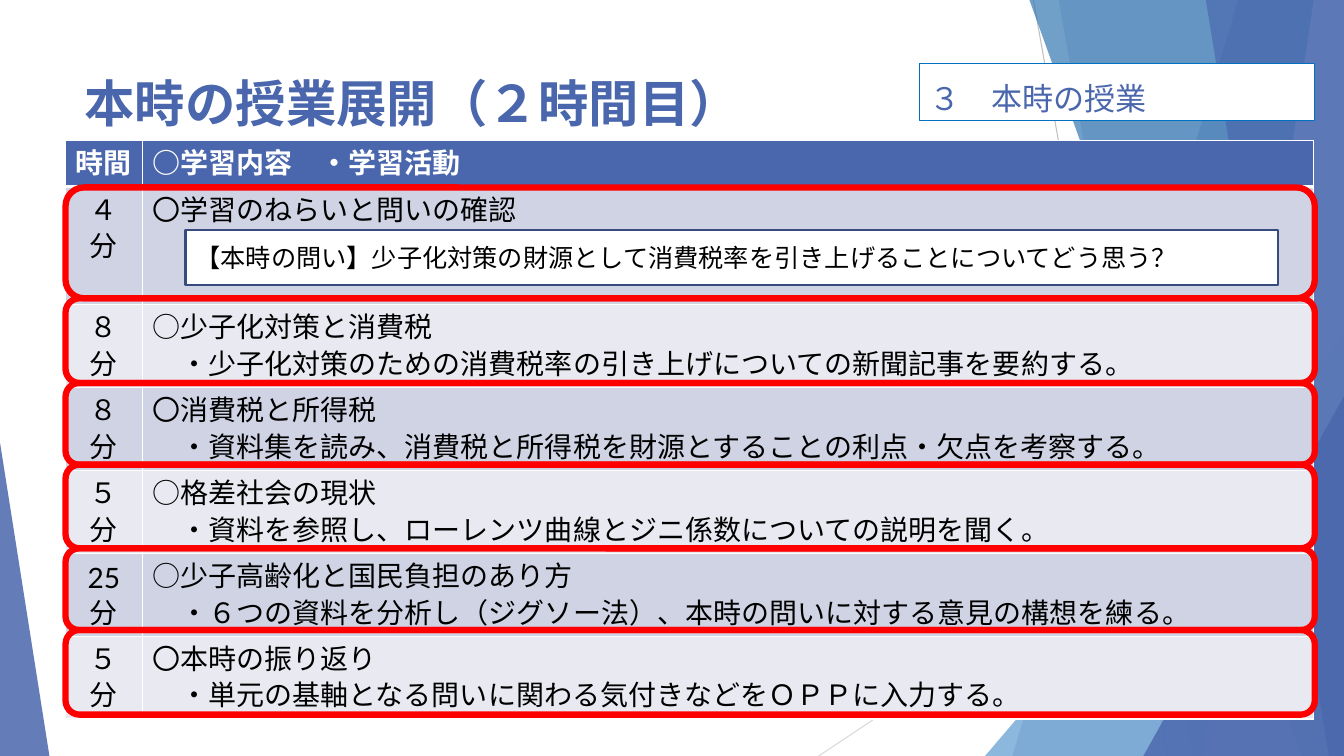
from dataclasses import dataclass, field
from typing import Any, Optional

from lxml.etree import SubElement
from pptx import Presentation
from pptx.dml.color import RGBColor
from pptx.enum.shapes import MSO_CONNECTOR, MSO_SHAPE
from pptx.enum.text import MSO_ANCHOR, PP_ALIGN
from pptx.oxml import parse_xml
from pptx.oxml.ns import nsdecls, qn
from pptx.util import Emu, Pt

EMU_PER_PX = 9144  # 100 px to the inch
SLIDE_WIDTH, SLIDE_HEIGHT = 1333, 750


@dataclass(frozen=True)
class Theme:
    heading_font: str = "Arial"
    body_font: str = "Lato"
    title_size: float = 36
    tag_size: float = 22.2
    table_size: float = 20
    question_size: float = 18
    accent: str = "4A66AC"
    sky: str = "629DD1"
    ocean: str = "3477B2"
    lavender: str = "90A2CF"
    white: str = "FFFFFF"
    black: str = "000000"
    gray: str = "BFBFBF"
    light_gray: str = "D9D9D9"
    bands: tuple[str, str] = ("D0D3E3", "E9EAF1")
    question_line: str = "374B7F"
    tag_line: str = "0070C0"
    frame_line: str = "FF0000"


THEME = Theme()


@dataclass(frozen=True)
class Box:
    left: int
    top: int
    width: int
    height: int

    def emu(self) -> tuple[Emu, ...]:
        return tuple(px(n) for n in (self.left, self.top, self.width, self.height))


@dataclass(frozen=True)
class Ray:
    start: tuple[int, int]
    end: tuple[int, int]
    color: str


@dataclass(frozen=True)
class Shard:
    """A translucent band running from the slide's top to its bottom, along the right edge."""
    top_left: int
    top_right: int
    bottom_left: int
    color: str
    opacity: int


@dataclass(frozen=True)
class Wedge:
    box: Box
    apex: float
    color: str
    opacity: int


@dataclass(frozen=True)
class Step:
    minutes: str
    content: list[str]
    height: int = 82


@dataclass(frozen=True)
class Label:
    text: str
    box: Box
    font: dict[str, Any]
    color: str
    line: Optional[tuple[str, float]] = None
    paragraph: dict[str, Any] = field(default_factory=dict)


RAYS = [
    Ray((1025, 0), (1158, 750), THEME.gray),
    Ray((1333, 403), (812, 750), THEME.light_gray),
]
BACKDROP = [
    Shard(1228, 1333, 1004, THEME.accent, 30),
    Shard(1050, 1333, 1183, THEME.accent, 20),
    Wedge(Box(977, 333, 356, 417), 1, THEME.sky, 72),
    Shard(1021, 1333, 1291, THEME.ocean, 70),
    Shard(1303, 1333, 1192, THEME.lavender, 70),
    Shard(1196, 1333, 1318, THEME.accent, 65),
    Wedge(Box(1134, 393, 199, 357), 1, THEME.accent, 80),
    Wedge(Box(0, 439, 49, 311), 0, THEME.accent, 85),
]
TITLE = Label("本時の授業展開（２時間目）", Box(74, 67, 940, 144),
              {"name": THEME.heading_font, "size": Pt(THEME.title_size), "bold": True}, THEME.accent)
QUESTION = Label("【本時の問い】少子化対策の財源として消費税率を引き上げることについてどう思う？",
                 Box(184, 228, 1084, 55),
                 {"name": THEME.body_font, "size": Pt(THEME.question_size)},
                 THEME.black, (THEME.question_line, 1.5))
SECTION_TAG = Label("３　本時の授業", Box(912, 63, 392, 57),
                    {"name": THEME.heading_font, "size": Pt(THEME.tag_size)},
                    THEME.accent, (THEME.tag_line, 0.75), {"line_spacing": 1.3})
HEADER = Step("時間", ["○学習内容　・学習活動"], 46)
STEPS = [
    Step("４", ["〇学習のねらいと問いの確認"], 117),
    Step("８", ["○少子化対策と消費税",
               "　・少子化対策のための消費税率の引き上げについての新聞記事を要約する。"]),
    Step("８", ["〇消費税と所得税",
               "　・資料集を読み、消費税と所得税を財源とすることの利点・欠点を考察する。"]),
    Step("５", ["○格差社会の現状",
               "　・資料を参照し、ローレンツ曲線とジニ係数についての説明を聞く。"]),
    Step("25", ["○少子高齢化と国民負担のあり方",
                "　・６つの資料を分析し（ジグソー法）、本時の問いに対する意見の構想を練る。"]),
    Step("５", ["〇本時の振り返り",
               "　・単元の基軸となる問いに関わる気付きなどをＯＰＰに入力する。"]),
]
TABLE_LEFT, TABLE_TOP = 65, 139
COLUMN_WIDTHS = [76, 1162]
FRAME_EDGES = [186, 296, 380, 461, 544, 625, 709]
FRAME_WIDTH = 1239


def px(length: int) -> Emu:
    return Emu(length * EMU_PER_PX)


def apply(target: Any, formats: dict[str, Any]) -> None:
    for name, value in formats.items():
        setattr(target, name, value)


def paint(target: Any, color: str, opacity: int = 100) -> None:
    target.fill.solid()
    target.fill.fore_color.rgb = RGBColor.from_string(color)
    if opacity < 100:
        swatch = target.fill._xPr.find(qn("a:solidFill"))[0]
        SubElement(swatch, qn("a:alpha"), val=str(opacity * 1000))


def outline(shape: Any, color: str, points: float) -> None:
    shape.line.color.rgb = RGBColor.from_string(color)
    shape.line.width = Pt(points)


def write(frame: Any, lines: list[str], font: dict[str, Any], color: str,
          paragraph_format: dict[str, Any]) -> None:
    frame.text = "\n".join(lines)
    for paragraph in frame.paragraphs:
        apply(paragraph, {"alignment": PP_ALIGN.LEFT} | paragraph_format)
        for run in paragraph.runs:
            apply(run.font, font)
            run.font.color.rgb = RGBColor.from_string(color)


def add_ray(shapes: Any, ray: Ray) -> None:
    points = [px(n) for n in (*ray.start, *ray.end)]
    connector = shapes.add_connector(MSO_CONNECTOR.STRAIGHT, *points)
    outline(connector, ray.color, 0.75)
    SubElement(connector._element.spPr, qn("a:effectLst"))


def add_backdrop(shapes: Any, part: Shard | Wedge) -> None:
    if isinstance(part, Shard):
        builder = shapes.build_freeform(part.top_left, 0, scale=EMU_PER_PX)
        builder.add_line_segments([(part.top_right, 0), (SLIDE_WIDTH, SLIDE_HEIGHT),
                                   (part.bottom_left, SLIDE_HEIGHT)], close=True)
        shape = builder.convert_to_shape()
    else:
        shape = shapes.add_shape(MSO_SHAPE.ISOSCELES_TRIANGLE, *part.box.emu())
        shape.adjustments[0] = part.apex
    shape.shadow.inherit = False
    shape.line.fill.background()
    paint(shape, part.color, part.opacity)


def add_label(shapes: Any, label: Label) -> None:
    if label.line:
        shape = shapes.add_shape(MSO_SHAPE.RECTANGLE, *label.box.emu())
        shape.shadow.inherit = False
        paint(shape, THEME.white)
        outline(shape, *label.line)
    else:
        shape = shapes.add_textbox(*label.box.emu())
    anchor = MSO_ANCHOR.MIDDLE if label.line else MSO_ANCHOR.TOP
    apply(shape.text_frame, {"word_wrap": True, "vertical_anchor": anchor})
    write(shape.text_frame, [label.text], label.font, label.color, label.paragraph)


def add_borders(cell: Any, bottom: float) -> None:
    properties = cell._tc.get_or_add_tcPr()
    for index, (side, points) in enumerate({"L": 1, "R": 1, "T": 1, "B": bottom}.items()):
        properties.insert(index, parse_xml(
            f'<a:ln{side} {nsdecls("a")} w="{Pt(points)}"><a:solidFill>'
            f'<a:srgbClr val="{THEME.white}"/></a:solidFill></a:ln{side}>'))


def add_lesson_table(shapes: Any) -> None:
    rows = [HEADER, *STEPS]
    box = Box(TABLE_LEFT, TABLE_TOP, sum(COLUMN_WIDTHS), sum(step.height for step in rows))
    table = shapes.add_table(len(rows), len(COLUMN_WIDTHS), *box.emu()).table
    table.horz_banding = False
    for column, width in zip(table.columns, COLUMN_WIDTHS):
        column.width = px(width)
    for index, step in enumerate(rows):
        is_header = index == 0
        table.rows[index].height = px(step.height)
        font = {"name": THEME.body_font, "size": Pt(THEME.table_size), "bold": is_header}
        time = [step.minutes] if is_header else [step.minutes, "分"]
        for cell, lines, alignment in zip(table.rows[index].cells, (time, step.content),
                                          (PP_ALIGN.CENTER, PP_ALIGN.LEFT)):
            paint(cell, THEME.accent if is_header else THEME.bands[(index - 1) % 2])
            add_borders(cell, 3 if is_header else 1)
            write(cell.text_frame, lines, font, THEME.white if is_header else THEME.black,
                  {"alignment": alignment, "line_spacing": Pt(26)})


def add_step_frame(shapes: Any, top: int, bottom: int) -> None:
    box = Box(TABLE_LEFT, top, FRAME_WIDTH, bottom - top)
    frame = shapes.add_shape(MSO_SHAPE.ROUNDED_RECTANGLE, *box.emu())
    frame.shadow.inherit = False
    frame.fill.background()
    outline(frame, THEME.frame_line, 4.5)


def main() -> None:
    deck = Presentation()
    apply(deck, {"slide_width": px(SLIDE_WIDTH), "slide_height": px(SLIDE_HEIGHT)})
    shapes = deck.slides.add_slide(deck.slide_layouts[6]).shapes
    for ray in RAYS:
        add_ray(shapes, ray)
    for part in BACKDROP:
        add_backdrop(shapes, part)
    add_label(shapes, TITLE)
    add_lesson_table(shapes)
    for label in (QUESTION, SECTION_TAG):
        add_label(shapes, label)
    for top, bottom in zip(FRAME_EDGES, FRAME_EDGES[1:]):
        add_step_frame(shapes, top, bottom)
    deck.save("out.pptx")


if __name__ == "__main__":
    main()
